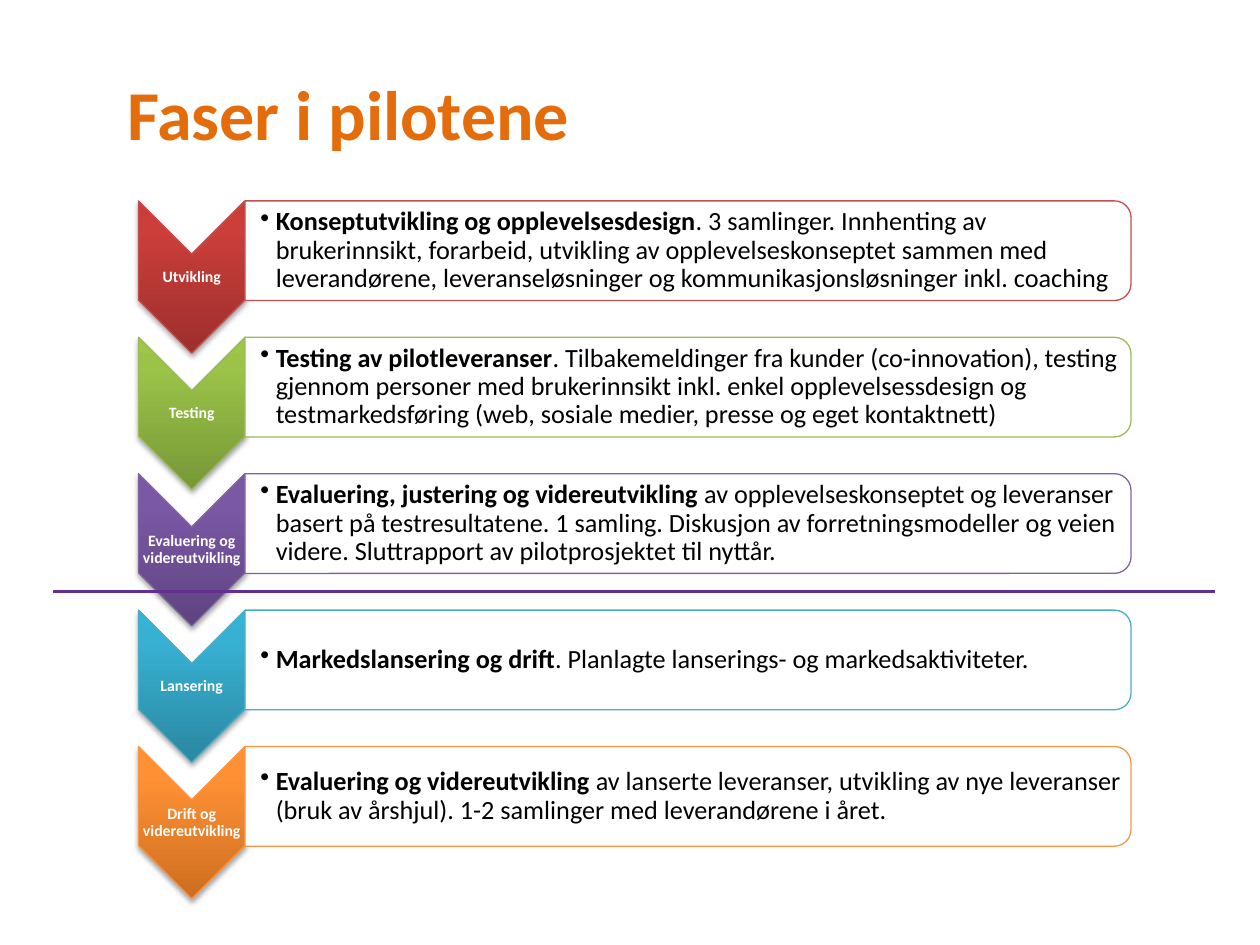
from lxml import etree
from pptx import Presentation
from pptx.dml.color import RGBColor
from pptx.enum import shapes, text
from pptx.oxml import ns
from pptx.util import Cm, Pt

TITLE = "Faser i pilotene"
# label, bold lead, rest, outline, gradient from bottom to top
PHASES = [
    ("Utvikling", "Konseptutvikling og opplevelsesdesign",
     ". 3 samlinger. Innhenting av brukerinnsikt, forarbeid, utvikling av "
     "opplevelseskonseptet sammen med leverandørene, leveranseløsninger og "
     "kommunikasjonsløsninger inkl. coaching",
     "C0504D", ("9C2F2D", "CB3E3A", "CE3B37")),
    ("Testing", "Testing av pilotleveranser",
     ". Tilbakemeldinger fra kunder (co-innovation), testing gjennom personer "
     "med brukerinnsikt inkl. enkel opplevelsessdesign og testmarkedsføring "
     "(web, sosiale medier, presse og eget kontaktnett)",
     "9BBB59", ("779737", "9BC348", "9DC746")),
    ("Evaluering og videreutvikling",
     "Evaluering, justering og videreutvikling ",
     "av opplevelseskonseptet og leveranser basert på testresultatene. "
     "1 samling. Diskusjon av forretningsmodeller og veien videre. "
     "Sluttrapport av pilotprosjektet til nyttår.",
     "8064A2", ("5F4480", "7B58A6", "7C57A8")),
    ("Lansering", "Markedslansering og drift",
     ". Planlagte lanserings- og markedsaktiviteter.",
     "4BACC6", ("2A88A2", "37B1D2", "34B4D6")),
    ("Drift og videreutvikling", "Evaluering og videreutvikling ",
     "av lanserte leveranser, utvikling av nye leveranser (bruk av årshjul). "
     "1-2 samlinger med leverandørene i året.",
     "F79646", ("CC6E20", "FF9034", "FF9136")),
]
THEME = dict(font="Calibri", title="E46C0A", body="000000", label="FFFFFF",
             bar="FFFFFF", rule="662D91",
             title_size=40, body_size=15, label_size=9)

# Lengths in cm
LEFT, TOP, STEP = 2.79, 4.05, 2.75
ARROW_W, ARROW_H = 2.15, 3.07
BAR_W, BAR_H = 17.86, 2.01
LABEL_DY, LABEL_H = 1.08, 0.91
PAD, INDENT = 0.03, 0.31


def rgb(name):
    return RGBColor.from_string(THEME.get(name, name))


def style(font, kind, bold=None):
    font.name = THEME["font"]
    font.size = Pt(THEME[kind + "_size"])
    font.color.rgb = rgb(kind)
    font.bold = bold


def turned(slide, kind, x, y, w, h, line):
    """Add a shape turned 90 degrees that covers the box x, y, w, h."""
    shape = slide.shapes.add_shape(
        kind, Cm(x + (w - h) / 2), Cm(y + (h - w) / 2), Cm(h), Cm(w))
    shape.rotation = 90
    shape.shadow.inherit = False
    shape.line.color.rgb = rgb(line)
    shape.line.width = Pt(0.75)
    return shape


def shade(shape, hues):
    """Fill with an upright gradient and cast a soft shadow below."""
    stops = "".join(
        f'<a:gs pos="{pos}000"><a:srgbClr val="{hue}"/></a:gs>'
        for pos, hue in zip((0, 80, 100), hues))
    grad = etree.fromstring(
        f'<a:gradFill {ns.nsdecls("a")} rotWithShape="0"><a:gsLst>{stops}'
        '</a:gsLst><a:lin ang="16200000" scaled="0"/></a:gradFill>')
    shape.fill.background()
    props = shape._element.spPr
    props.replace(props.find(ns.qn("a:noFill")), grad)
    props.find(ns.qn("a:effectLst")).append(etree.fromstring(
        f'<a:outerShdw {ns.nsdecls("a")} blurRad="40000" dist="23000" '
        'dir="5400000" rotWithShape="0"><a:srgbClr val="000000">'
        '<a:alpha val="35000"/></a:srgbClr></a:outerShdw>'))


def textbox(slide, x, y, w, h, left=PAD):
    """Add a middle-anchored box and return its first paragraph."""
    frame = slide.shapes.add_textbox(Cm(x), Cm(y), Cm(w), Cm(h)).text_frame
    frame.word_wrap = True
    frame.vertical_anchor = text.MSO_ANCHOR.MIDDLE
    frame.margin_left = Cm(left)
    frame.margin_top = frame.margin_right = frame.margin_bottom = Cm(PAD)
    para = frame.paragraphs[0]
    para.line_spacing = 0.9
    return para


def bullet(para):
    props = para._p.get_or_add_pPr()
    props.set("marL", str(Cm(INDENT)))
    props.set("indent", str(-Cm(INDENT)))
    etree.SubElement(props, ns.qn("a:buChar")).set("char", "•")


def phase(slide, y, label, lead, rest, line, hues):
    arrow = turned(slide, shapes.MSO_SHAPE.CHEVRON,
                   LEFT, y, ARROW_W, ARROW_H, line)
    shade(arrow, hues)
    para = textbox(slide, LEFT, y + LABEL_DY, ARROW_W, LABEL_H)
    para.text = label
    para.alignment = text.PP_ALIGN.CENTER
    style(para.font, "label", True)

    x = LEFT + ARROW_W
    bar = turned(slide, shapes.MSO_SHAPE.ROUND_2_SAME_RECTANGLE,
                 x, y, BAR_W, BAR_H, line)
    bar.fill.solid()
    bar.fill.fore_color.rgb = rgb("bar")
    tint = bar._element.spPr.find(ns.qn("a:solidFill"))[0]
    etree.SubElement(tint, ns.qn("a:alpha")).set("val", "90000")
    para = textbox(slide, x, y + 0.1, BAR_W - 0.1, BAR_H - 0.2, INDENT)
    bullet(para)
    style(para.font, "body")
    for words, bold in ((lead, True), (rest, False)):
        run = para.add_run()
        run.text = words
        style(run.font, "body", bold)


def main():
    deck = Presentation()
    deck.slide_width, deck.slide_height = Cm(25.4), Cm(19.05)
    slide = deck.slides.add_slide(deck.slide_layouts[5])

    title = slide.shapes.title
    title.left, title.top = Cm(2.31), Cm(1.3)
    title.width, title.height = Cm(17.78), Cm(1.8)
    frame = title.text_frame
    frame.text = TITLE
    frame.auto_size = text.MSO_AUTO_SIZE.NONE
    frame.vertical_anchor = text.MSO_ANCHOR.TOP
    frame.paragraphs[0].alignment = text.PP_ALIGN.LEFT
    style(frame.paragraphs[0].font, "title", True)

    for i, item in enumerate(PHASES):
        phase(slide, TOP + i * STEP, *item)

    rule = slide.shapes.add_connector(
        shapes.MSO_CONNECTOR.STRAIGHT, Cm(1.07), Cm(11.92), Cm(24.5), Cm(11.92))
    rule.line.color.rgb = rgb("rule")
    rule.line.width = Pt(2)
    etree.SubElement(rule._element.spPr, ns.qn("a:effectLst"))

    deck.save("out.pptx")


if __name__ == "__main__":
    main()
